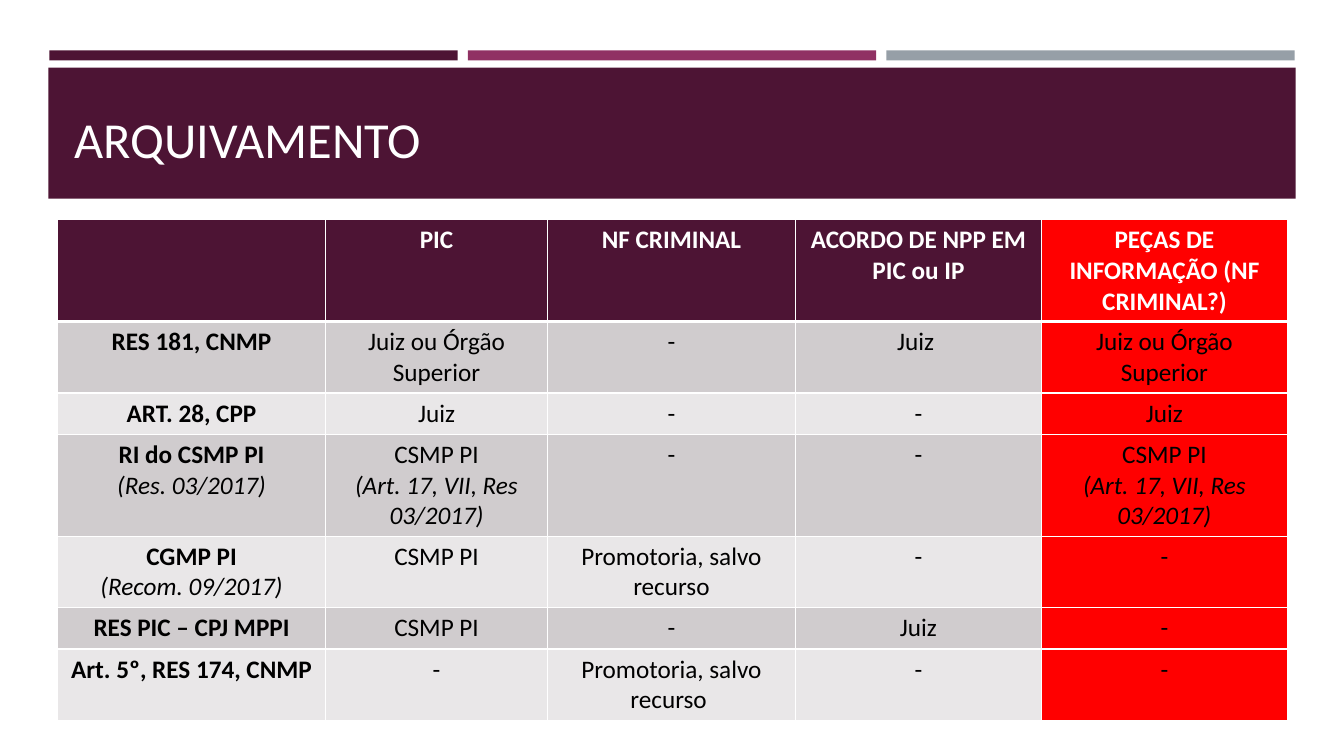
from pptx import Presentation
from pptx.dml.color import RGBColor as RGB
from pptx.enum.shapes import MSO_SHAPE as SHAPE
from pptx.enum.text import MSO_ANCHOR as ANCHOR, PP_ALIGN as ALIGN
from pptx.oxml import parse_xml
from pptx.oxml.ns import nsdecls
from pptx.util import Pt

PX = 9144  # 100 px to the inch
COLORS = {
    "plum": "4D1434", "berry": "903163", "slate": "969FA7", "red": "FF0000",
    "dark": "D0CCCE", "light": "E9E7E8", "white": "FFFFFF", "black": "000000",
}
COLS = [266, 220, 246, 244, 244]
ROWS = [101, 71, 41, 101, 71, 41, 71]
ORGAN = "Juiz ou Órgão Superior"
COUNCIL = "CSMP PI\n(Art. 17, VII, Res 03/2017)"
APPEAL = "Promotoria, salvo recurso"
CELLS = [
    ["", "PIC", "NF CRIMINAL", "ACORDO DE NPP EM PIC ou IP",
     "PEÇAS DE INFORMAÇÃO (NF CRIMINAL?)"],
    ["RES 181, CNMP", ORGAN, "-", "Juiz ", ORGAN],
    ["ART. 28, CPP", "Juiz", "-", "-", "Juiz"],
    ["RI do CSMP PI\n(Res. 03/2017)", COUNCIL, "-", "-", COUNCIL],
    ["CGMP PI\n(Recom. 09/2017)", "CSMP PI", APPEAL, "-", "-"],
    ["RES PIC – CPJ MPPI", "CSMP PI", "-", "Juiz", "-"],
    ["Art. 5º, RES 174, CNMP", "-", APPEAL + " ", "-", "-"],
]


def emu(*vals):
    return [v * PX for v in vals]


def paint(fill, color):
    fill.solid()
    fill.fore_color.rgb = RGB.from_string(COLORS[color])


def write(frame, text, size=18, color="black", bold=False, align=ALIGN.CENTER):
    """Put each line in its own paragraph; lines after the first are italic."""
    for i, line in enumerate(text.split("\n")):
        para = frame.paragraphs[0] if i == 0 else frame.add_paragraph()
        para.alignment = align
        font = para.font
        if line:
            run = para.add_run()
            run.text = line
            font = run.font
        font.name, font.size = "Calibri", Pt(size)
        font.bold, font.italic = bold and i == 0, i > 0
        font.color.rgb = RGB.from_string(COLORS[color])


def block(slide, box, color):
    shape = slide.shapes.add_shape(SHAPE.RECTANGLE, *emu(*box))
    shape.shadow.inherit = False
    paint(shape.fill, color)
    shape.line.fill.background()


def edge(cell, top, bottom):
    """Draw white borders of the given point widths."""
    props = cell._tc.get_or_add_tcPr()
    for i, (side, width) in enumerate(zip("LRTB", (1, 1, top, bottom))):
        props.insert(i, parse_xml(
            f'<a:ln{side} {nsdecls("a")} w="{Pt(width)}"><a:solidFill>'
            f'<a:srgbClr val="{COLORS["white"]}"/></a:solidFill></a:ln{side}>'))


def header(slide, box):
    left, top, width, height = box
    # Three strips above the band
    gap, strip = 10, 405
    for i, color in enumerate(("plum", "berry", "slate")):
        block(slide, (left + 1 + i * (strip + gap), top, strip, 10), color)
    # Band and title
    block(slide, (left, top + 17, width, height - 17), "plum")
    title = slide.shapes.add_textbox(
        *emu(left + 16, top + 27, width - 31, 95)).text_frame
    title.word_wrap = True
    title.vertical_anchor = ANCHOR.BOTTOM
    write(title, "ARQUIVAMENTO", size=36, color="white", align=ALIGN.LEFT)


def grid(slide, box):
    table = slide.shapes.add_table(len(ROWS), len(COLS), *emu(*box)).table
    for col, width in zip(table.columns, COLS):
        col.width = width * PX
    for row, height in zip(table.rows, ROWS):
        row.height = height * PX
    for r, texts in enumerate(CELLS):
        head = r == 0
        base = "plum" if head else "dark" if r % 2 else "light"
        for c, text in enumerate(texts):
            cell = table.cell(r, c)
            paint(cell.fill, "red" if c == len(COLS) - 1 else base)
            edge(cell, 3 if r == 1 else 1, 3 if head else 1)
            write(cell.text_frame, text, bold=head or c == 0,
                  color="white" if head else "black")


def main():
    deck = Presentation()
    deck.slide_width, deck.slide_height = emu(1333, 750)
    slide = deck.slides.add_slide(deck.slide_layouts[6])
    paint(slide.background.fill, "white")
    header(slide, (48, 50, 1237, 147))
    grid(slide, (57, 218, sum(COLS), sum(ROWS)))
    deck.save("out.pptx")


if __name__ == "__main__":
    main()
